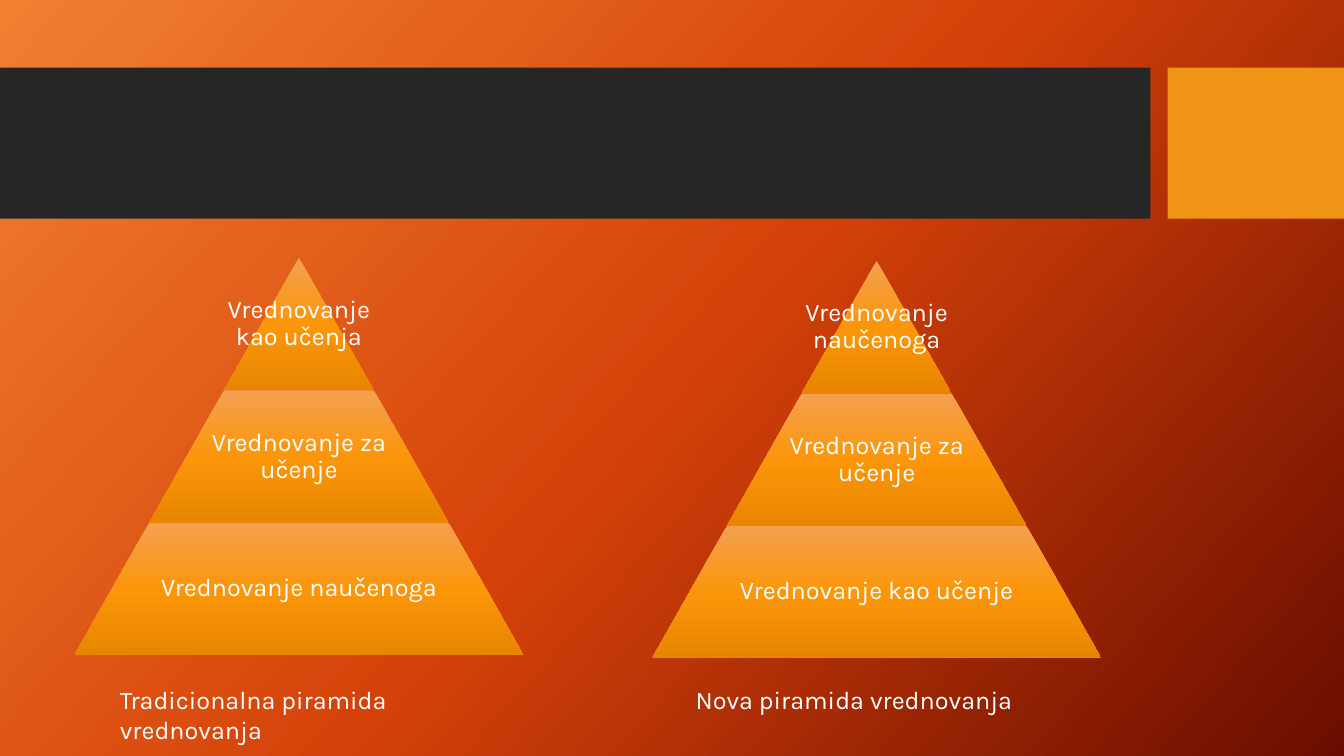
"""Slide with the old and the new pyramid of assessment side by side."""
from copy import deepcopy
from pptx import Presentation
from pptx.dml.color import RGBColor
from pptx.enum import shapes, text
from pptx.util import Inches, Pt

PYRAMIDS = [
    (0.74, 2.56, 1.09, 0.71, "Tradicionalna piramida vrednovanja",
     ["Vrednovanje kao učenja", "Vrednovanje za učenje", "Vrednovanje naučenoga"]),
    (6.47, 2.59, 6.8, 0.4, "Nova piramida vrednovanja",
     ["Vrednovanje naučenoga", "Vrednovanje za učenje", "Vrednovanje kao učenje"]),
]
BANDS = [(0, 11.41, RGBColor(0x26, 0x26, 0x26)), (11.58, 1.75, RGBColor(0xF0, 0x94, 0x15))]
WHITE = RGBColor(0xFF, 0xFF, 0xFF)
BACK = [RGBColor(0xF1, 0x80, 0x31), RGBColor(0xD5, 0x42, 0x09), RGBColor(0x6A, 0x0D, 0x00)]
TIER = [RGBColor(0xF4, 0xA0, 0x50), RGBColor(0xFB, 0x96, 0x0A), RGBColor(0xE8, 0x86, 0x00)]
FONT = "Karla"
BASE, HIGH = 4.45, 1.3125
PART = 0.65
INSET = 0.03


def shade(owner, fill, colors, angle):
    """Fill with three evenly spaced colours, the angle counted clockwise."""
    fill.gradient()
    fill.gradient_angle = 360 - angle
    stops = owner.element.find(".//{*}gsLst")
    stops.append(deepcopy(stops[0]))
    for i, (stop, color) in enumerate(zip(fill.gradient_stops, colors)):
        stop.position = i / 2
        stop.color.rgb = color


def draw(slide, kind, left, top, width, height):
    """Add a plain shape without line or shadow."""
    shape = slide.shapes.add_shape(kind, *map(Inches, (left, top, width, height)))
    shape.shadow.inherit = False
    shape.line.fill.background()
    return shape


def write(slide, words, left, top, width, height):
    """Add a wrapped white text box and return its frame."""
    frame = slide.shapes.add_textbox(*map(Inches, (left, top, width, height))).text_frame
    frame.word_wrap = True
    frame.text = words
    font = frame.paragraphs[0].runs[0].font
    font.name, font.size, font.color.rgb = FONT, Pt(18), WHITE
    return frame


def label(slide, words, *place):
    """Add a centred tier label."""
    frame = write(slide, words, *place)
    frame.vertical_anchor = text.MSO_ANCHOR.MIDDLE
    frame.margin_left = frame.margin_right = Inches(INSET)
    frame.margin_top = frame.margin_bottom = Inches(INSET)
    line = frame.paragraphs[0]
    line.alignment = text.PP_ALIGN.CENTER
    line.line_spacing = 0.9


def stack(slide, left, top, tiers):
    """Build a pyramid whose tiers widen evenly to the base."""
    step = BASE / len(tiers)
    for i, words in enumerate(tiers):
        wide = step * (i + 1)
        x, y = left + (BASE - wide) / 2, top + HIGH * i
        shape = draw(slide, shapes.MSO_SHAPE.TRAPEZOID, x, y, wide, HIGH)
        shape.adjustments[0] = step / 2 / HIGH
        shade(shape, shape.fill, TIER, 90)
        room = wide * PART if i else wide
        label(slide, words, x + (wide - room) / 2, y, room, HIGH)


def main():
    """Build and save the slide."""
    deck = Presentation()
    deck.slide_width, deck.slide_height = Inches(13.33), Inches(7.5)
    slide = deck.slides.add_slide(deck.slide_layouts[6])
    shade(slide, slide.background.fill, BACK, 42)
    for left, width, color in BANDS:
        band = draw(slide, shapes.MSO_SHAPE.RECTANGLE, left, 0.67, width, 1.5)
        band.fill.solid()
        band.fill.fore_color.rgb = color
    for left, top, start, height, title, tiers in PYRAMIDS:
        stack(slide, left, top, tiers)
        write(slide, title, start, 6.74, 3.79, height)
    deck.save("out.pptx")


if __name__ == "__main__":
    main()
